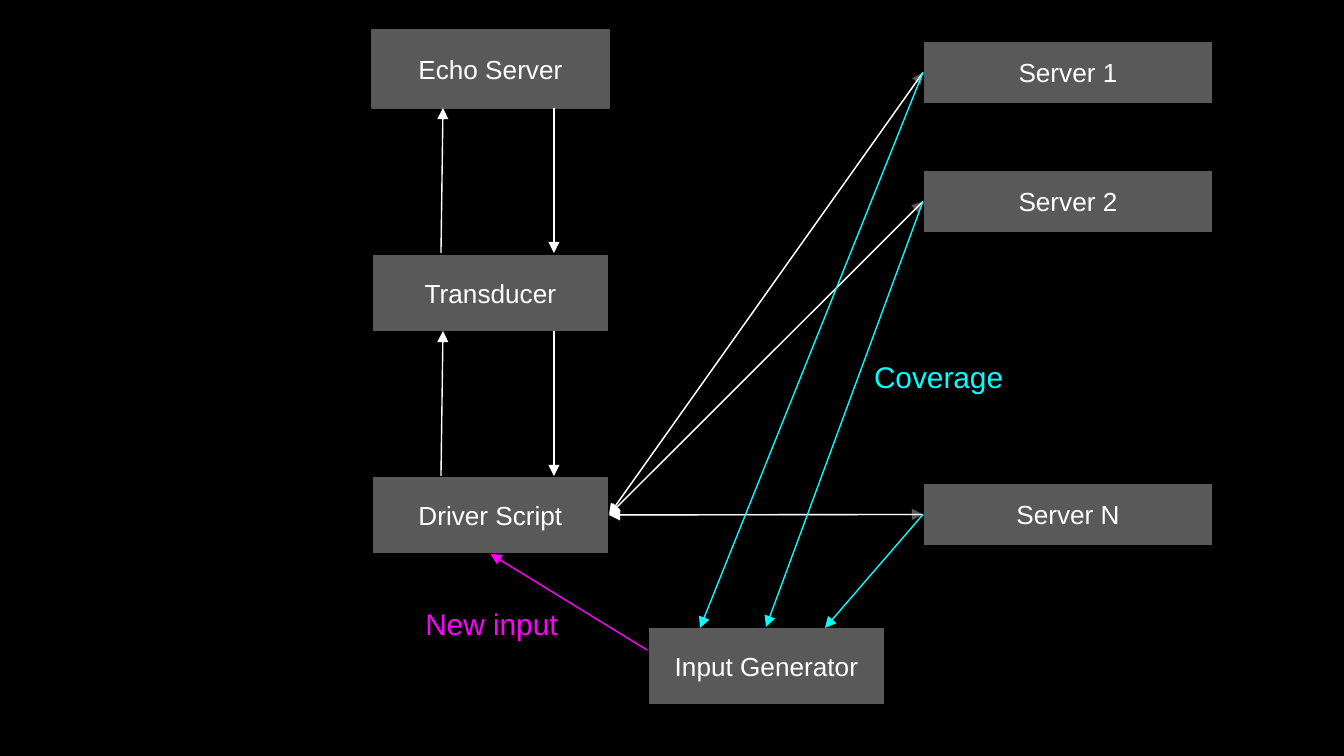
"""Build a diagram of servers, a driver script and a coverage-guided input generator."""
from dataclasses import dataclass

from lxml.etree import SubElement
from pptx import Presentation
from pptx.dml.color import RGBColor
from pptx.enum.shapes import MSO_CONNECTOR, MSO_SHAPE
from pptx.enum.text import MSO_ANCHOR, PP_ALIGN
from pptx.oxml.ns import qn
from pptx.util import Pt


@dataclass(frozen=True)
class Theme:
    background: str = "000000"
    box: str = "595959"
    text: str = "FFFFFF"
    coverage: str = "00FFFF"
    new_input: str = "FF00FF"
    font: str = "Arial"
    box_size: int = 14
    label_size: int = 16
    line_width: float = 0.75


THEME = Theme()
PIXEL = 914400 / 134.4
SLIDE_SIZE = (1344, 756)
INSET = 13
BOX_SIZE = (237, 78)
SERVER_SIZE = (290, 63)
LEFT_SITE, BOTTOM_SITE, RIGHT_SITE = 1, 2, 3

BOXES = [
    ("Echo Server", (372, 30), THEME.box),
    ("Transducer", (372, 254), THEME.background),
    ("Driver Script", (372, 476), THEME.background),
    ("Input Generator", (648, 627), THEME.background),
]
SERVER_LEFT = 923
SERVERS = [
    ("Server 1", 41, (700, 628)),
    ("Server 2", 170, (766, 627)),
    ("Server N", 483, (825, 628)),
]
LABELS = [
    ("Coverage", (861, 346, 179, 56), THEME.coverage, PP_ALIGN.LEFT),
    ("New input", (402, 593, 179, 56), THEME.new_input, PP_ALIGN.CENTER),
]
UP_X, DOWN_X = (441, 443), 554
GAPS = [(108, 253), (331, 476)]
NEW_INPUT_START = (647, 650)


def emu(pixels):
    """Turn pixels into EMU."""
    return round(pixels * PIXEL)


def color(value):
    """Turn a hex string into a colour."""
    return RGBColor.from_string(value)


def write_text(shape, text, *, size, fill, align, anchor):
    """Put one formatted paragraph into a shape."""
    frame = shape.text_frame
    frame.word_wrap = True
    frame.vertical_anchor = anchor
    frame.margin_left = frame.margin_right = emu(INSET)
    frame.margin_top = frame.margin_bottom = emu(INSET)
    paragraph = frame.paragraphs[0]
    paragraph.alignment = align
    run = paragraph.add_run()
    run.text = text
    run.font.name = THEME.font
    run.font.size = Pt(size)
    run.font.color.rgb = color(fill)


def add_box(slide, text, position, size, border):
    """Add a filled rectangle with centred text."""
    shape = slide.shapes.add_shape(MSO_SHAPE.RECTANGLE, *map(emu, position + size))
    shape.shadow.inherit = False
    shape.fill.solid()
    shape.fill.fore_color.rgb = color(THEME.box)
    shape.line.color.rgb = color(border)
    shape.line.width = Pt(THEME.line_width)
    write_text(shape, text, size=THEME.box_size, fill=THEME.text,
               align=PP_ALIGN.CENTER, anchor=MSO_ANCHOR.MIDDLE)
    return shape


def add_arrow(slide, start, end, stroke):
    """Add an arrow; each end is a point or a (shape, connection site) pair."""
    connector = slide.shapes.add_connector(MSO_CONNECTOR.STRAIGHT, 0, 0, 0, 0)
    if isinstance(start[0], int):
        connector.begin_x, connector.begin_y = map(emu, start)
    else:
        connector.begin_connect(*start)
    if isinstance(end[0], int):
        connector.end_x, connector.end_y = map(emu, end)
    else:
        connector.end_connect(*end)
    connector.line.color.rgb = color(stroke)
    connector.line.width = Pt(THEME.line_width)
    SubElement(connector.line._get_or_add_ln(), qn("a:tailEnd"), type="triangle")
    SubElement(connector._element.spPr, qn("a:effectLst"))


def main():
    """Lay out the slide and save it."""
    presentation = Presentation()
    presentation.slide_width, presentation.slide_height = map(emu, SLIDE_SIZE)
    slide = presentation.slides.add_slide(presentation.slide_layouts[6])
    slide.background.fill.solid()
    slide.background.fill.fore_color.rgb = color(THEME.background)

    boxes = {text: add_box(slide, text, position, BOX_SIZE, border)
             for text, position, border in BOXES}
    servers = [(add_box(slide, text, (SERVER_LEFT, top), SERVER_SIZE, THEME.background), target)
               for text, top, target in SERVERS]

    for top, bottom in GAPS:
        add_arrow(slide, (UP_X[0], bottom), (UP_X[1], top), THEME.text)
        add_arrow(slide, (DOWN_X, top), (DOWN_X, bottom), THEME.text)

    driver = boxes["Driver Script"]
    for server, target in servers:
        add_arrow(slide, (driver, RIGHT_SITE), (server, LEFT_SITE), THEME.box)
        add_arrow(slide, (server, LEFT_SITE), (driver, RIGHT_SITE), THEME.text)
    for server, target in servers:
        add_arrow(slide, (server, LEFT_SITE), target, THEME.coverage)
    add_arrow(slide, NEW_INPUT_START, (driver, BOTTOM_SITE), THEME.new_input)

    for text, bounds, fill, align in LABELS:
        label = slide.shapes.add_textbox(*map(emu, bounds))
        write_text(label, text, size=THEME.label_size, fill=fill,
                   align=align, anchor=MSO_ANCHOR.TOP)

    presentation.save("out.pptx")


if __name__ == "__main__":
    main()
